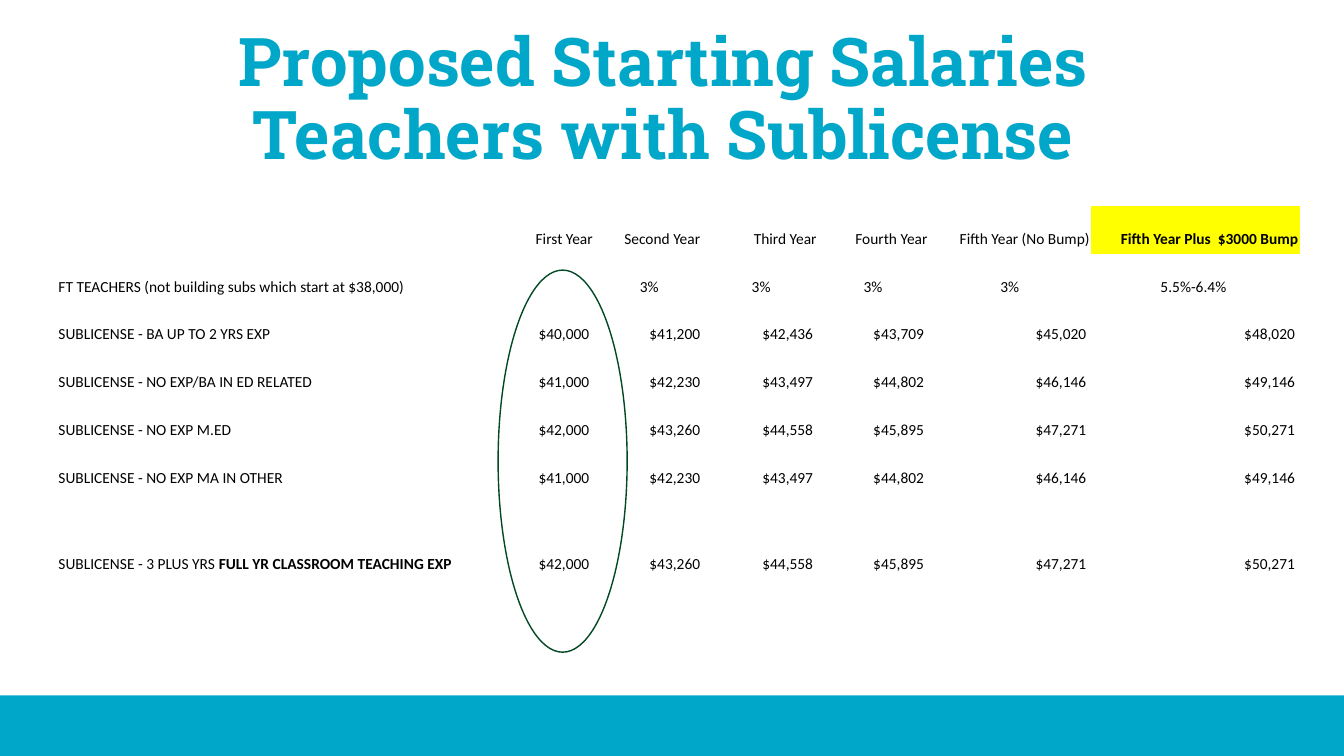
from pptx import Presentation
from pptx.dml.color import RGBColor
from pptx.enum.shapes import MSO_SHAPE
from pptx.enum.text import MSO_ANCHOR, MSO_AUTO_SIZE, PP_ALIGN
from pptx.util import Inches, Pt

LEFT, CENTER, RIGHT = PP_ALIGN.LEFT, PP_ALIGN.CENTER, PP_ALIGN.RIGHT
TEAL = RGBColor(0x00, 0xA7, 0xC8)
GREEN = RGBColor(0x00, 0x49, 0x24)
YELLOW = RGBColor(0xFF, 0xFF, 0x00)
BLACK = RGBColor(0x00, 0x00, 0x00)
NO_GRID = "{2D5ABB26-0587-4C30-8999-92F81FD0307C}"

prs = Presentation()
prs.slide_width, prs.slide_height = Inches(13.33), Inches(7.5)
W, H = prs.slide_width, prs.slide_height
s = prs.slides.add_slide(prs.slide_layouts[5])


def add_run(p, text, font, size, color, bold=False):
    r = p.add_run()
    r.text = text
    r.font.name, r.font.size, r.font.bold = font, Pt(size), bold
    r.font.color.rgb = color


# Footer band
band_h = int(H * 0.08)
band = s.shapes.add_shape(MSO_SHAPE.RECTANGLE, 0, H - band_h, W, band_h)
band.shadow.inherit = False
band.fill.solid()
band.fill.fore_color.rgb = TEAL
band.line.fill.background()

# Title
title = s.shapes.title
title.left, title.top = Inches(0.37), Inches(0.39)
title.width, title.height = Inches(12.42), Inches(1.23)
tf = title.text_frame
tf.auto_size = MSO_AUTO_SIZE.NONE
tf.word_wrap = True
tf.vertical_anchor = MSO_ANCHOR.MIDDLE
tf.margin_left = tf.margin_right = tf.margin_top = tf.margin_bottom = Inches(0.1)
p = tf.paragraphs[0]
p.alignment, p.line_spacing = CENTER, 0.9
add_run(p, "Proposed Starting Salaries", "Roboto Slab", 48, TEAL, True)
p.add_line_break()
add_run(p, "Teachers with Sublicense", "Roboto Slab", 48, TEAL, True)

# Salary table: 3% a year, then a fifth year with the bump
RAISE, BUMP = 1.03, 3000
starting = [
    ("SUBLICENSE - BA UP TO 2 YRS EXP", "", 40000),
    ("SUBLICENSE - NO EXP/BA IN ED RELATED", "", 41000),
    ("SUBLICENSE - NO EXP M.ED", "", 42000),
    ("SUBLICENSE - NO EXP MA IN OTHER", "", 41000),
    ("SUBLICENSE - 3 PLUS YRS ", "FULL YR CLASSROOM TEACHING EXP", 42000),
]
# Each cell is a pair: regular text, bold text
rows = [
    [("", ""), ("First Year", ""), ("Second Year ", ""), ("Third Year", ""),
     ("Fourth Year", ""), ("Fifth Year (No Bump)", ""),
     ("", "Fifth Year Plus  $3000 Bump")],
    [("FT TEACHERS (not building subs which start at $38,000)", ""), ("", "")]
    + [("3%", "")] * 4 + [("5.5%-6.4% ", "")],
]
for label, emphasis, salary in starting:
    years = [salary * RAISE ** n for n in range(5)]
    years.append(years[-1] + BUMP)
    rows.append([(label, emphasis)] + [(f"${pay:,.0f} ", "") for pay in years])

col_widths = [4.22, 1.1, 1.1, 1.12, 1.1, 1.61, 2.07]
row_heights = [0.475] * 6 + [0.85]
frame = s.shapes.add_table(len(rows), len(col_widths), Inches(0.57), Inches(2.04),
                           Inches(sum(col_widths)), Inches(sum(row_heights)))
table = frame.table
table.first_row = table.horz_banding = False
table._tbl.tblPr[0].text = NO_GRID
for col, width in zip(table.columns, col_widths):
    col.width = Inches(width)
for row, height in zip(table.rows, row_heights):
    row.height = Inches(height)

for i, row in enumerate(rows):
    for j, (regular, bold) in enumerate(row):
        cell = table.cell(i, j)
        cell.fill.background()
        cell.vertical_anchor = MSO_ANCHOR.BOTTOM
        cell.margin_left = cell.margin_top = cell.margin_right = Inches(0.01)
        cell.margin_bottom = Inches(0.05)
        p = cell.text_frame.paragraphs[0]
        p.alignment = LEFT if j == 0 else CENTER if i == 1 else RIGHT
        if regular:
            add_run(p, regular, "Calibri", 11, BLACK)
        if bold:
            add_run(p, bold, "Calibri", 11, BLACK, True)

bump_header = table.cell(0, len(col_widths) - 1)
bump_header.fill.solid()
bump_header.fill.fore_color.rgb = YELLOW

# Ring around the first-year column
ring = s.shapes.add_shape(MSO_SHAPE.OVAL, Inches(4.94), Inches(2.68),
                          Inches(1.28), Inches(3.79))
ring.shadow.inherit = False
ring.fill.background()
ring.line.color.rgb = GREEN
ring.line.width = Pt(1)

prs.save("out.pptx")
